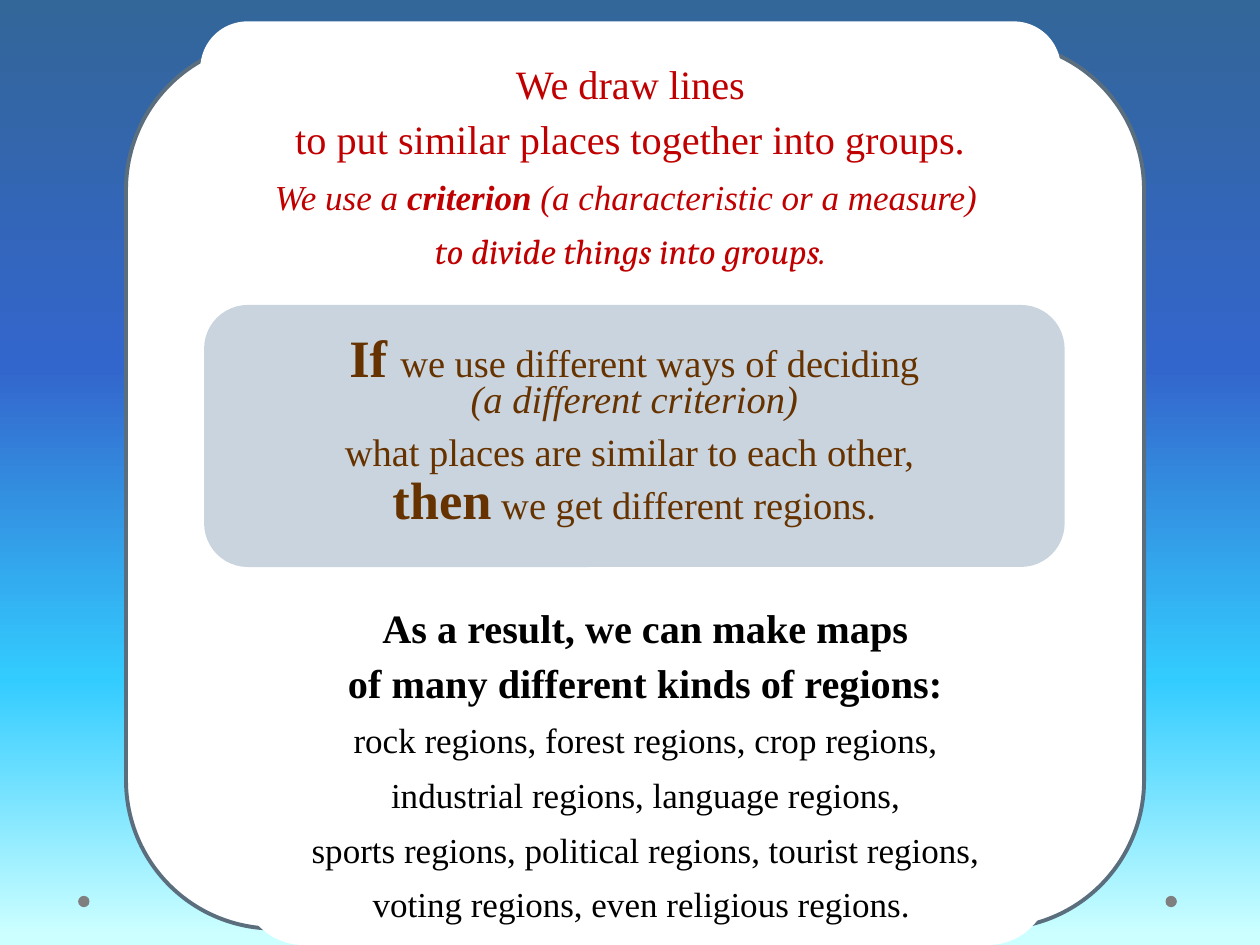
from dataclasses import dataclass

import pptx
import pptx.dml.color
import pptx.enum.shapes
import pptx.enum.text
import pptx.oxml
import pptx.oxml.ns
import pptx.util
from pptx.util import Inches

COLORS = {
    "panel": "FFFFFF",
    "panel_border": "5B6E7E",
    "condition_panel": "CAD4DE",
    "purpose": "C00000",
    "condition": "663300",
    "result": "000000",
    "dot": "7F7F7F",
}
SKY = [(0, "336699"), (39, "3366CC"), (72, "33CCFF"), (99, "CCFFFF"), (100, "CCFFFF")]
SHAPES = pptx.enum.shapes.MSO_SHAPE


@dataclass
class Run:
    text: str
    size: float
    bold: bool = False
    italic: bool = False
    font: str = "Times New Roman"


@dataclass
class Line:
    spacing: float
    runs: list[Run]


@dataclass
class Callout:
    box: tuple[float, float, float, float]
    fill: str
    text_color: str
    lines: list[Line]


def rgb(name: str) -> pptx.dml.color.RGBColor:
    return pptx.dml.color.RGBColor.from_string(COLORS[name])


def paint_sky(slide) -> None:
    fill = slide.background.fill
    fill.gradient()
    fill.gradient_angle = 270  # counter-clockwise, so top to bottom
    stops = slide.element.find(".//" + pptx.oxml.ns.qn("a:gsLst"))
    for stop in list(stops):
        stops.remove(stop)
    for percent, color in SKY:
        stops.append(pptx.oxml.parse_xml(
            f'<a:gs {pptx.oxml.ns.nsdecls("a")} pos="{percent * 1000}">'
            f'<a:srgbClr val="{color}"/></a:gs>'))


def add_panel(slide, kind, box: tuple, fill: str):
    panel = slide.shapes.add_shape(kind, *map(Inches, box))
    panel.shadow.inherit = False
    panel.fill.solid()
    panel.fill.fore_color.rgb = rgb(fill)
    panel.line.fill.background()
    if kind == SHAPES.ROUNDED_RECTANGULAR_CALLOUT:
        # The pointer tip rests on the bottom edge, so it stays hidden
        for index, value in enumerate((-0.053, 0.5, 0.167)):
            panel.adjustments[index] = value
    return panel


def add_text(paragraph, text: str, *, size: float, color: str, font: str,
             bold: bool = False, italic: bool = False) -> None:
    for index, part in enumerate(text.split("\n")):
        if index:
            paragraph.add_line_break()
        if not part:
            continue
        run = paragraph.add_run()
        run.text = part
        run.font.size = pptx.util.Pt(size)
        run.font.name = font
        run.font.bold = bold
        run.font.italic = italic
        run.font.color.rgb = rgb(color)


def add_callout(slide, callout: Callout) -> None:
    panel = add_panel(slide, SHAPES.ROUNDED_RECTANGULAR_CALLOUT, callout.box, callout.fill)
    frame = panel.text_frame
    frame.word_wrap = True
    frame.vertical_anchor = pptx.enum.text.MSO_ANCHOR.MIDDLE
    for index, line in enumerate(callout.lines):
        paragraph = frame.add_paragraph() if index else frame.paragraphs[0]
        paragraph.alignment = pptx.enum.text.PP_ALIGN.CENTER
        paragraph.line_spacing = line.spacing
        for run in line.runs:
            add_text(paragraph, run.text, size=run.size, color=callout.text_color,
                     font=run.font, bold=run.bold, italic=run.italic)


CALLOUTS = [
    Callout((1.59, 0.17, 6.83, 2.24), "panel", "purpose", [
        Line(1.13, [Run("We draw lines", 23)]),
        Line(1.13, [Run("to put similar places together into groups.", 23)]),
        Line(1.3, [
            Run("We use a ", 20, italic=True),
            Run("criterion", 20, bold=True, italic=True),
            Run(" (a characteristic or a measure) \n", 20, italic=True),
            Run("to divide things into groups.", 20, italic=True, font="Cambria"),
        ]),
    ]),
    Callout((1.62, 2.42, 6.83, 2.08), "condition_panel", "condition", [
        Line(0.72, [
            Run("If ", 30, bold=True),
            Run("we use different ways of deciding\n", 22),
            Run("(a different criterion)", 22, italic=True),
        ]),
        Line(1.18, [Run("what places are similar to each other, ", 22)]),
        Line(0.89, [Run("then", 30, bold=True), Run(" we get different regions.", 22)]),
    ]),
    Callout((1.92, 4.58, 6.41, 2.92), "panel", "result", [
        Line(1.13, [Run("As a result, we can make maps", 23, bold=True)]),
        Line(1.13, [Run("of many different kinds of regions:", 23, bold=True)]),
        Line(1.3, [Run("rock regions, forest regions, crop regions,\n"
                       "industrial regions, language regions,", 20)]),
        Line(1.3, [Run("sports regions, political regions, tourist regions,", 20)]),
        Line(1.3, [Run("voting regions, even religious regions. ", 20)]),
    ]),
]


def main() -> None:
    deck = pptx.Presentation()
    deck.slide_width, deck.slide_height = Inches(10), Inches(7.5)
    slide = deck.slides.add_slide(deck.slide_layouts[6])
    paint_sky(slide)

    # Footer dots
    for left in (9.25, 0.62):
        add_panel(slide, SHAPES.OVAL, (left, 7.11, 0.09, 0.09), "dot")

    # Bordered backdrop
    backdrop = add_panel(slide, SHAPES.ROUNDED_RECTANGULAR_CALLOUT,
                         (1, 0.33, 8.08, 7.04), "panel")
    backdrop.line.color.rgb = rgb("panel_border")
    backdrop.line.width = pptx.util.Pt(2.25)

    # Purpose, condition and result
    for callout in CALLOUTS:
        add_callout(slide, callout)

    deck.save("out.pptx")


if __name__ == "__main__":
    main()
